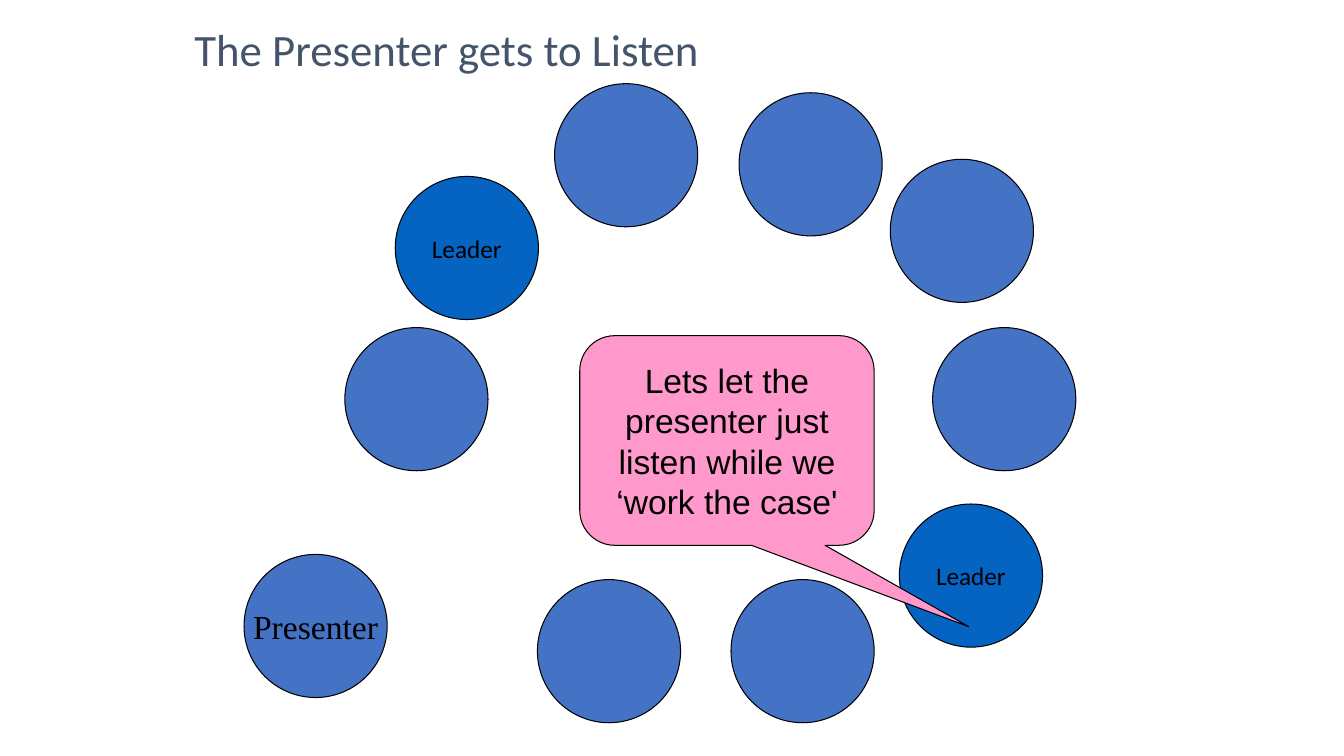
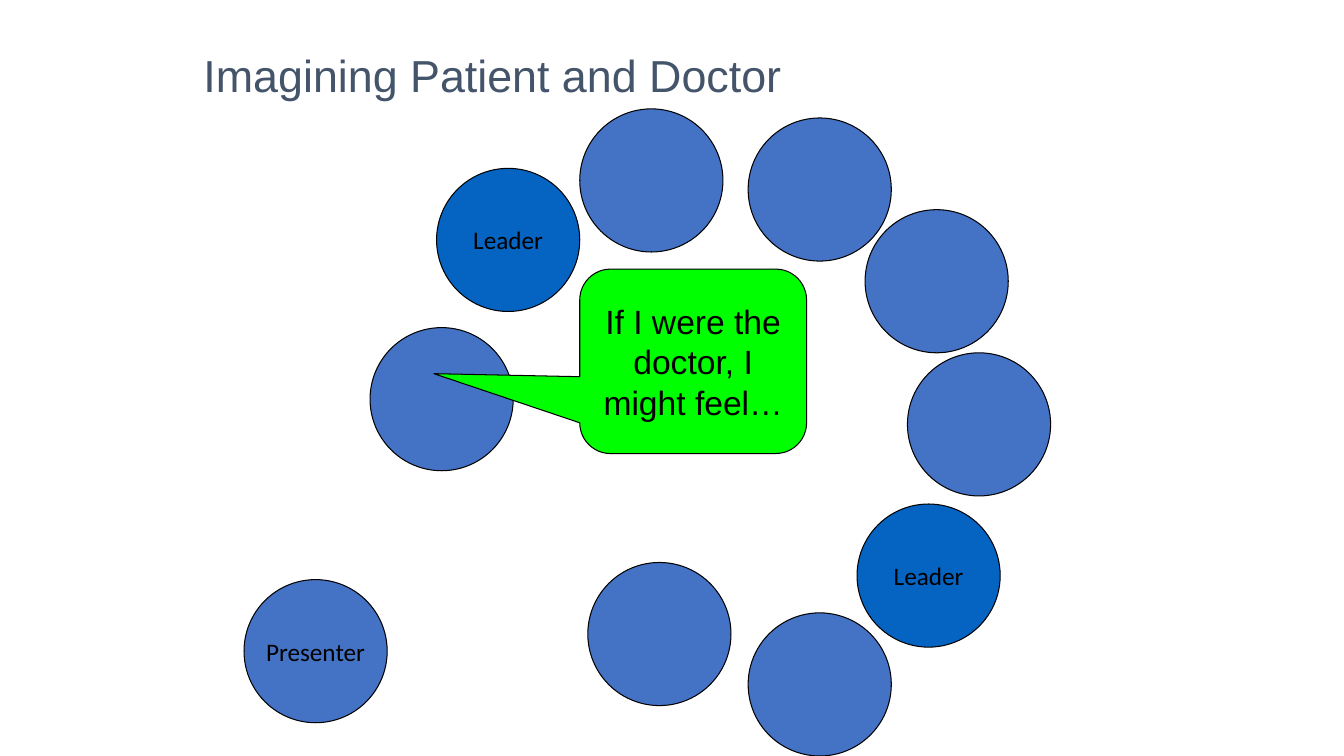
from pptx import Presentation
from pptx.dml.color import RGBColor
from pptx.enum.shapes import MSO_SHAPE
from pptx.enum.text import MSO_ANCHOR, PP_ALIGN
from pptx.util import Inches, Pt

OVAL = MSO_SHAPE.OVAL
CALLOUT = MSO_SHAPE.ROUNDED_RECTANGULAR_CALLOUT
MIDDLE = MSO_ANCHOR.MIDDLE
CENTER = PP_ALIGN.CENTER

BLACK = RGBColor(0x00, 0x00, 0x00)
TITLE_GREY = RGBColor(0x44, 0x54, 0x6A)
MEMBER_BLUE = RGBColor(0x44, 0x72, 0xC4)
LEADER_BLUE = RGBColor(0x05, 0x63, 0xC1)
PINK = RGBColor(0xFF, 0x99, 0xCC)
GREEN = RGBColor(0x00, 0xFF, 0x00)

SANS, BODY, SERIF = "Arial", "Calibri", "Times New Roman"
SEAT_SIZE = 1.42
TITLE_HEIGHT = 0.64
CORNER = 0.167


def add_text(tf, text, font, size, color=BLACK):
    p = tf.paragraphs[0]
    r = p.add_run()
    r.text = text
    r.font.name = font
    r.font.size = Pt(size)
    r.font.color.rgb = color
    return p


def add_outlined(slide, kind, box, fill):
    """Add a filled shape with a thin black outline and centred text."""
    sp = slide.shapes.add_shape(kind, *map(Inches, box))
    sp.shadow.inherit = False
    sp.fill.solid()
    sp.fill.fore_color.rgb = fill
    sp.line.color.rgb = BLACK
    sp.line.width = Pt(0.75)
    sp.text_frame.vertical_anchor = MIDDLE
    sp.text_frame.paragraphs[0].alignment = CENTER
    return sp


def add_title(slide, left, top, width, text, font):
    box = slide.shapes.add_textbox(
        Inches(left), Inches(top), Inches(width), Inches(TITLE_HEIGHT))
    box.text_frame.word_wrap = True
    add_text(box.text_frame, text, font, 32, TITLE_GREY)


def add_seat(slide, left, top, fill=MEMBER_BLUE, label="", font=BODY, size=18):
    sp = add_outlined(slide, OVAL, (left, top, SEAT_SIZE, SEAT_SIZE), fill)
    if label:
        sp.text_frame.word_wrap = False
        add_text(sp.text_frame, label, font, size)


def add_speech(slide, box, tip, fill, text):
    """Add a speech bubble; tip is its offset from the centre, as a share of the size."""
    sp = add_outlined(slide, CALLOUT, box, fill)
    for i, value in enumerate((*tip, CORNER)):
        sp.adjustments[i] = value
    sp.text_frame.word_wrap = True
    add_text(sp.text_frame, text, SANS, 24)


def add_circle_slide(prs, title, leaders, members, presenter, speech):
    """Add a slide with the group seated in a ring and one person speaking."""
    slide = prs.slides.add_slide(prs.slide_layouts[6])
    for seat in leaders:
        add_seat(slide, *seat, fill=LEADER_BLUE, label="Leader")
    for seat in members:
        add_seat(slide, *seat)
    left, top, font, size = presenter
    add_seat(slide, left, top, label="Presenter", font=font, size=size)
    add_title(slide, *title)
    add_speech(slide, *speech)


def main():
    prs = Presentation()
    prs.slide_width = Inches(13.33)
    prs.slide_height = Inches(7.5)
    add_circle_slide(
        prs,
        title=(1.83, 0.17, 6, "The Presenter gets to Listen", BODY),
        leaders=[(3.92, 1.75), (8.92, 5)],
        members=[(5.5, 0.83), (7.33, 0.92), (8.83, 1.58), (9.25, 3.25),
                 (7.25, 5.75), (5.33, 5.75), (3.42, 3.25)],
        presenter=(2.42, 5.5, SERIF, 24),
        speech=((5.75, 3.33, 2.92, 2.08), (0.821, 0.888), PINK,
                "Lets let the presenter just listen while we ‘work the case'"),
    )
    add_circle_slide(
        prs,
        title=(1.92, 0.42, 6.67, "Imagining Patient and Doctor", SANS),
        leaders=[(4.33, 1.67), (8.5, 5)],
        members=[(5.75, 1.08), (7.42, 1.17), (8.58, 2.08), (9, 3.5),
                 (7.42, 6.08), (5.83, 5.58), (3.67, 3.25)],
        presenter=(2.42, 5.75, BODY, 18),
        speech=((5.75, 2.67, 2.25, 1.83), (-1.143, 0.067), GREEN,
                "If I were the doctor, I might feel…"),
    )
    prs.save("out.pptx")


if __name__ == "__main__":
    main()
